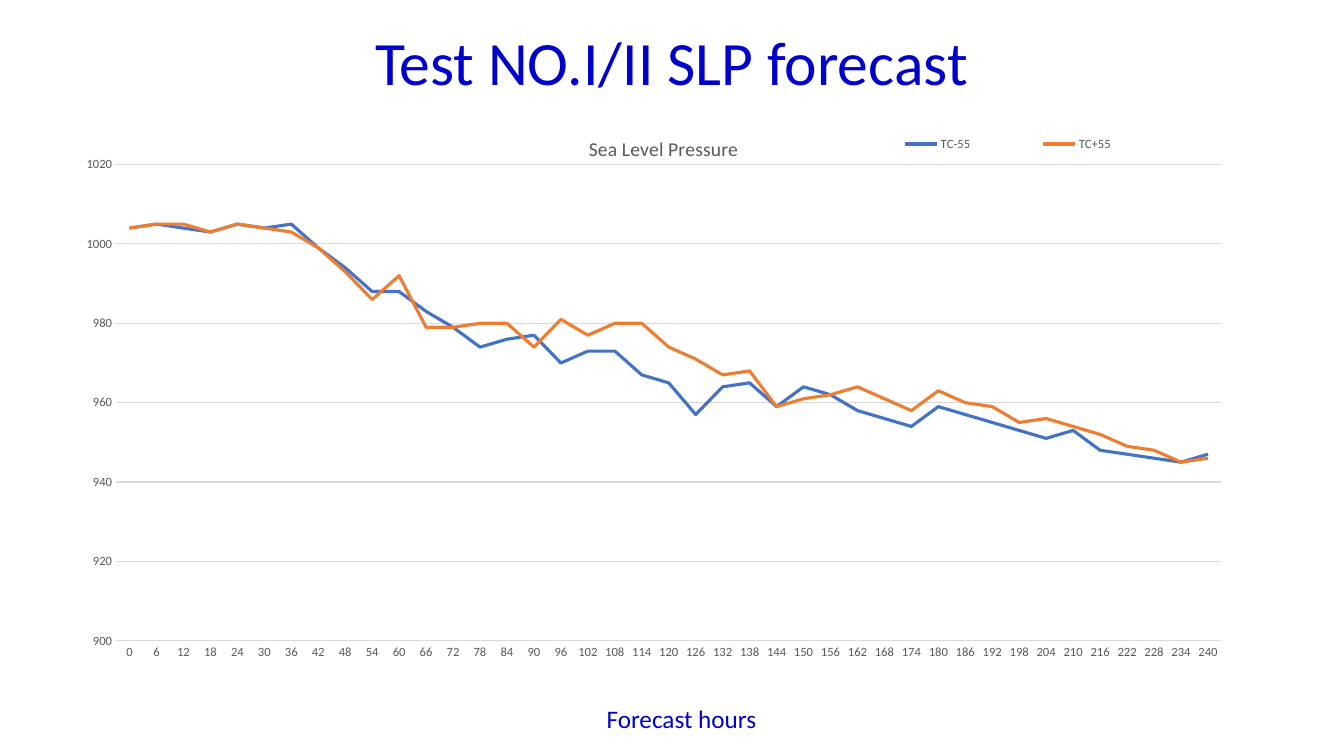
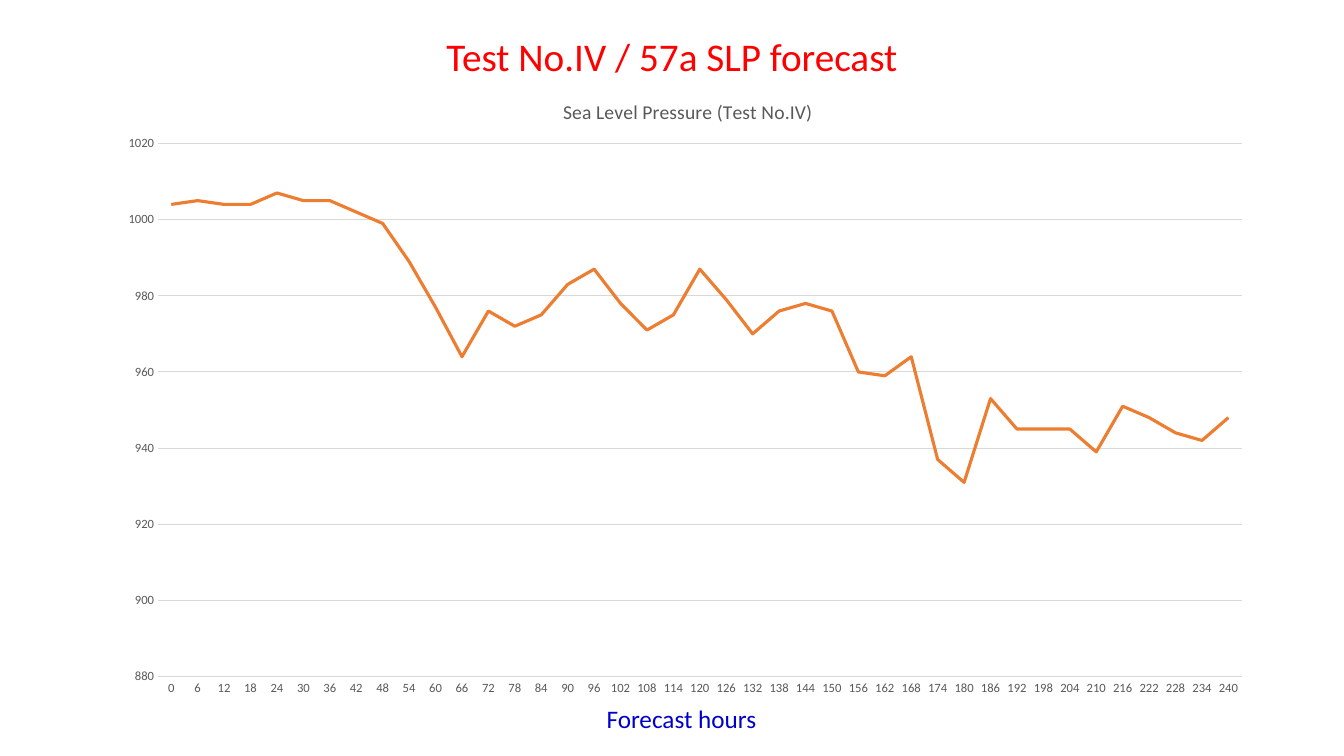
from dataclasses import dataclass

from lxml import etree
from pptx import Presentation
from pptx.chart.chart import Chart
from pptx.chart.data import CategoryChartData
from pptx.dml.color import RGBColor
from pptx.enum.chart import XL_CHART_TYPE, XL_LEGEND_POSITION, XL_TICK_MARK
from pptx.enum.text import MSO_ANCHOR, MSO_AUTO_SIZE, PP_ALIGN
from pptx.oxml.ns import qn
from pptx.slide import Slide
from pptx.util import Pt

LINE = XL_CHART_TYPE.LINE
BOTTOM = XL_LEGEND_POSITION.BOTTOM
NO_TICK = XL_TICK_MARK.NONE
MIDDLE, TOP = MSO_ANCHOR.MIDDLE, MSO_ANCHOR.TOP
FIT = MSO_AUTO_SIZE.SHAPE_TO_FIT_TEXT
FIXED = MSO_AUTO_SIZE.NONE
LEFT, CENTER = PP_ALIGN.LEFT, PP_ALIGN.CENTER


@dataclass(frozen=True)
class Theme:
    font: str = "Calibri"
    blue: str = "0000CC"
    red: str = "FF0000"
    gray: str = "595959"
    grid: str = "D9D9D9"
    cool: str = "4472C4"
    warm: str = "ED7D31"
    head: int = 44
    subhead: int = 28
    note: int = 18
    title: int = 14
    label: int = 9
    thin: float = 0.75
    thick: float = 2.25


THEME = Theme()
Box = tuple[float, float, float, float]


@dataclass(frozen=True)
class Label:
    text: str
    box: Box
    size: int
    color: str
    align: PP_ALIGN = CENTER
    anchor: MSO_ANCHOR = TOP
    fit: MSO_AUTO_SIZE = FIT
    wrap: bool = False
    space: float = 1.0


@dataclass(frozen=True)
class Curve:
    name: str
    color: str
    vals: tuple[int, ...]


@dataclass(frozen=True)
class Graph:
    """Box is in points; plot, legend and title spots are shares of the box."""
    title: str
    box: Box
    low: int
    curves: tuple[Curve, ...]
    plot: Box
    spot: tuple[float, float]
    legend: Box | None = None


@dataclass(frozen=True)
class Page:
    head: Label
    graph: Graph


HOURS = [str(hour) for hour in range(0, 241, 6)]
HIGH, STEP = 1020, 20
FOOT = Label("Forecast hours", (426.2, 499, 122.4, 28.8), THEME.note, THEME.blue, LEFT)

PAGES = (
    Page(
        Label("Test NO.I/II SLP forecast", (173.5, 15.1, 612.7, 63.4), THEME.head,
              THEME.blue, anchor=MIDDLE, fit=FIXED, wrap=True, space=0.9),
        Graph(
            "Sea Level Pressure", (55.4, 78.5, 833.8, 420.5), 900,
            (
                Curve("TC-55", THEME.cool, (
                    1004, 1005, 1004, 1003, 1005, 1004, 1005, 999, 994, 988, 988,
                    983, 979, 974, 976, 977, 970, 973, 973, 967, 965,
                    957, 964, 965, 959, 964, 962, 958, 956, 954, 959,
                    957, 955, 953, 951, 953, 948, 947, 946, 945, 947)),
                Curve("TC+55", THEME.warm, (
                    1004, 1005, 1005, 1003, 1005, 1004, 1003, 999, 993, 986, 992,
                    979, 979, 980, 980, 974, 981, 977, 980, 980, 974,
                    971, 967, 968, 959, 961, 962, 964, 961, 958, 963,
                    960, 959, 955, 956, 954, 952, 949, 948, 945, 946)),
            ),
            (0.033, 0.093, 0.947, 0.809), (0.435, 0.037), (0.65, 0.033, 0.294, 0.05)),
    ),
    Page(
        Label("Test No.IV / 57a SLP forecast", (309.6, 19.4, 340.6, 41), THEME.subhead,
              THEME.red),
        Graph(
            "Sea Level Pressure (Test No.IV)", (75.6, 51.1, 828.7, 455), 880,
            (
                Curve("Series 1", THEME.warm, (
                    1004, 1005, 1004, 1004, 1007, 1005, 1005, 1002, 999, 989, 977,
                    964, 976, 972, 975, 983, 987, 978, 971, 975, 987,
                    979, 970, 976, 978, 976, 960, 959, 964, 937, 931,
                    953, 945, 945, 945, 939, 951, 948, 944, 942, 948)),
            ),
            (0.045, 0.113, 0.934, 0.837), (0.391, 0.037)),
    ),
)


def apply(item: object, form: dict[str, object]) -> None:
    for key, value in form.items():
        setattr(item, key, value)


def style(font: object, size: int, color: str) -> None:
    apply(font, {"name": THEME.font, "size": Pt(size), "bold": False})
    font.color.rgb = RGBColor.from_string(color)


def stroke(line: object, color: str, width: float) -> None:
    line.color.rgb = RGBColor.from_string(color)
    line.width = Pt(width)


def write(slide: Slide, label: Label) -> None:
    frame = slide.shapes.add_textbox(*map(Pt, label.box)).text_frame
    apply(frame, {"word_wrap": label.wrap, "auto_size": label.fit,
                  "vertical_anchor": label.anchor})
    para = frame.paragraphs[0]
    apply(para, {"text": label.text, "alignment": label.align,
                 "line_spacing": label.space})
    style(para.runs[0].font, label.size, label.color)


def place(chart: Chart, part: str, spot: tuple[float, ...]) -> None:
    """Give a chart part a fixed position, and a size if the spot has one."""
    owner = chart.element.xpath(f"c:chart/c:{part}")[0]
    for old in owner.findall(qn("c:layout")):
        owner.remove(old)
    layout = etree.Element(qn("c:layout"))
    manual = etree.SubElement(layout, qn("c:manualLayout"))
    rules = [("xMode", "edge"), ("yMode", "edge"), *zip("xywh", spot)]
    if part == "plotArea":
        rules.insert(0, ("layoutTarget", "inner"))
    for tag, value in rules:
        etree.SubElement(manual, qn(f"c:{tag}")).set("val", str(value))
    after = owner.find(qn("c:overlay"))
    if after is None:
        owner.insert(0, layout)
    else:
        after.addprevious(layout)


def plot(slide: Slide, graph: Graph) -> None:
    data = CategoryChartData()
    data.categories = HOURS
    for curve in graph.curves:
        data.add_series(curve.name, curve.vals)
    chart = slide.shapes.add_chart(LINE, *map(Pt, graph.box), data).chart
    style(chart.font, THEME.label, THEME.gray)

    chart.has_title = True
    para = chart.chart_title.text_frame.paragraphs[0]
    para.text = graph.title
    style(para.runs[0].font, THEME.title, THEME.gray)
    place(chart, "title", graph.spot)
    place(chart, "plotArea", graph.plot)

    chart.has_legend = graph.legend is not None
    if graph.legend:
        apply(chart.legend, {"position": BOTTOM, "include_in_layout": False})
        style(chart.legend.font, THEME.label, THEME.gray)
        place(chart, "legend", graph.legend)

    across, up = chart.category_axis, chart.value_axis
    for axis in (across, up):
        apply(axis, {"major_tick_mark": NO_TICK, "minor_tick_mark": NO_TICK})
        style(axis.tick_labels.font, THEME.label, THEME.gray)
    apply(up, {"minimum_scale": graph.low, "maximum_scale": HIGH,
               "major_unit": STEP, "has_major_gridlines": True})
    stroke(across.format.line, THEME.grid, THEME.thin)
    stroke(up.major_gridlines.format.line, THEME.grid, THEME.thin)
    up.format.line.fill.background()

    chart.plots[0].vary_by_categories = False
    for series, curve in zip(chart.plots[0].series, graph.curves):
        series.smooth = False
        stroke(series.format.line, curve.color, THEME.thick)


def main() -> None:
    deck = Presentation()
    apply(deck, {"slide_width": Pt(960), "slide_height": Pt(540)})
    blank = deck.slide_layouts[6]
    for page in PAGES:
        slide = deck.slides.add_slide(blank)
        plot(slide, page.graph)
        write(slide, page.head)
        write(slide, FOOT)
    deck.save("out.pptx")


if __name__ == "__main__":
    main()
